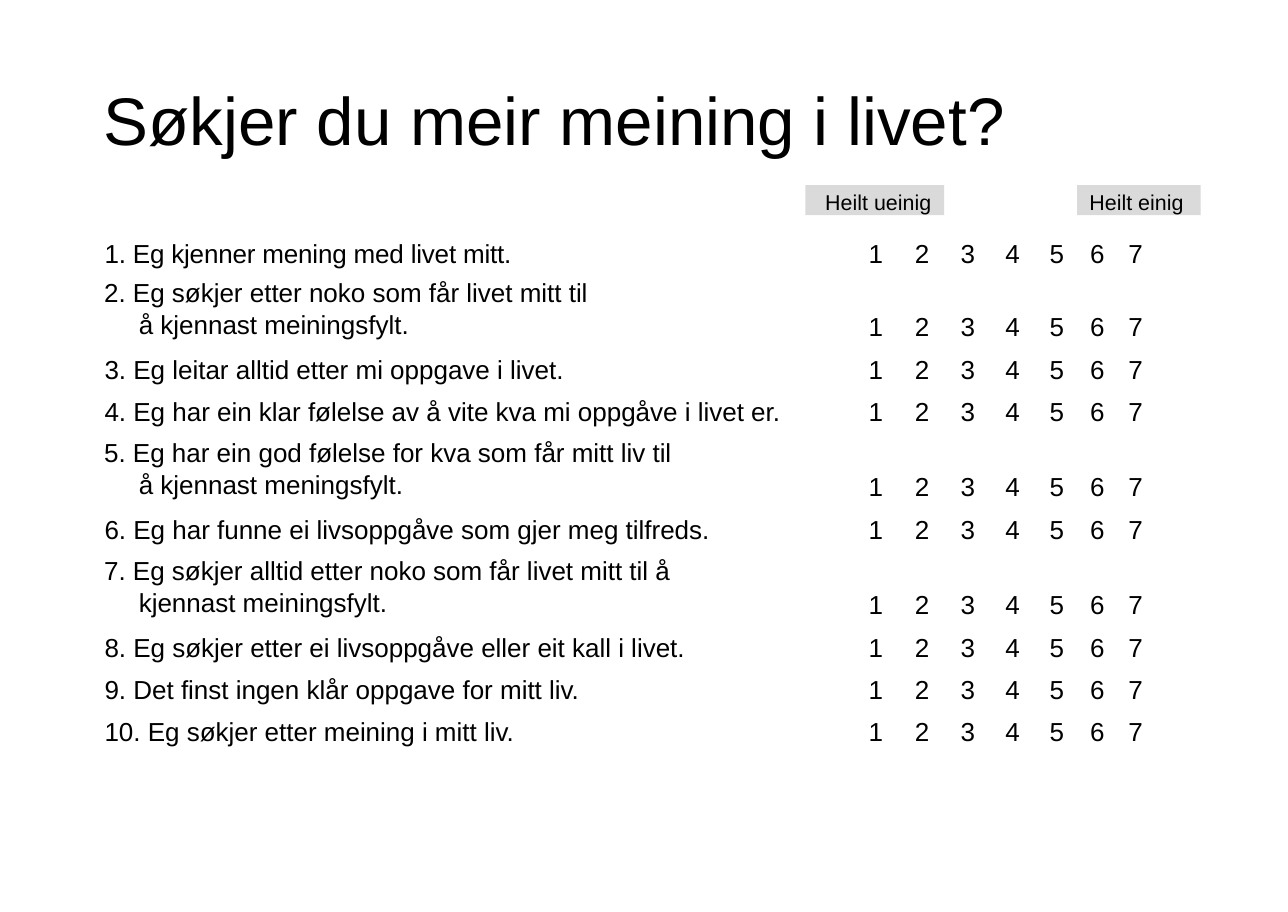
from pptx import Presentation
from pptx.dml.color import RGBColor
from pptx.enum.shapes import MSO_SHAPE as Form
from pptx.enum.text import MSO_ANCHOR as Anchor, MSO_AUTO_SIZE as Fit, PP_ALIGN as Align
from pptx.util import Cm, Pt


def tint(code):
    return RGBColor.from_string(code)


class Sheet:
    face = "Arial"
    ink = "000000"
    gray = "DADADA"

    def __init__(self, deck):
        self.slide = deck.slides.add_slide(deck.slide_layouts[5])

    def inset(self, box, left=0, top=0, right=0):
        box.margin_left, box.margin_top = Cm(left), Cm(top)
        box.margin_right, box.margin_bottom = Cm(right), 0
        box.vertical_anchor = Anchor.TOP

    def words(self, frame, text, size, align=Align.LEFT, space=0):
        frame.text = text
        frame.word_wrap = True
        para = frame.paragraphs[0]
        para.alignment = align
        for run in para.runs:
            run.font.name = self.face
            run.font.size = Pt(size)
            run.font.color.rgb = tint(self.ink)
            if space:
                run._r.get_or_add_rPr().set("spc", str(space))
        return para

    def title(self, text, left, top, width, height):
        head = self.slide.shapes.title
        head.left, head.top, head.width, head.height = map(Cm, (left, top, width, height))
        frame = head.text_frame
        frame.auto_size = Fit.NONE
        self.inset(frame, 0.03, 0.03)
        self.words(frame, text, 44)

    def label(self, text, left, width, pad):
        box = self.slide.shapes.add_shape(Form.RECTANGLE, Cm(left), Cm(4.27), Cm(width), Cm(0.69))
        box.shadow.inherit = False
        box.fill.solid()
        box.fill.fore_color.rgb = tint(self.gray)
        box.line.fill.background()
        self.inset(box.text_frame, pad, 0.08)
        self.words(box.text_frame, text, 14)

    def grid(self, items, widths, left, top):
        count = len(items)
        frame = self.slide.shapes.add_table(
            count, len(widths), Cm(left), Cm(top), Cm(sum(widths)), Cm(11.7))
        table = frame.table
        table.first_row = table.horz_banding = False
        for col, width in zip(table.columns, widths):
            col.width = Cm(width)
        for i, (text, right) in enumerate(items):
            edge = i in (0, count - 1)
            table.rows[i].height = Cm(1.75 if right else 0.81 if edge else 0.97)
            pad = 0.08 if i == count - 1 else 0 if edge else 0.1
            line = Pt(19.6 if i else 18.9) if edge else None
            for j in range(len(widths)):
                cell = table.cell(i, j)
                cell.fill.background()
                if j == 0:
                    self.ask(cell, text, right, pad, line, -4 if i else -13)
                else:
                    self.mark(cell, j, 0.87 if right else pad, line)

    def ask(self, cell, text, right, pad, line, space):
        self.inset(cell, 0, 0.03 if right else pad, right)
        para = self.words(cell.text_frame, text, 17, space=space)
        para.line_spacing = 1.08 if right else line
        props = para._p.get_or_add_pPr()
        props.set("marL", str(Cm(0.89 if right else 0.1)))
        props.set("indent", str(Cm(-0.8 if right else 0)))

    def mark(self, cell, value, pad, line):
        first = value == 1
        left = {5: 0.05, 7: 0.18}.get(value, 0.02)
        self.inset(cell, left, pad, 0.36 if first else 0)
        align = Align.RIGHT if first else Align.CENTER
        self.words(cell.text_frame, str(value), 17, align).line_spacing = line


ITEMS = [
    ("1. Eg kjenner mening med livet mitt.", 0),
    ("2. Eg søkjer etter noko som får livet mitt til å kjennast meiningsfylt.", 5.4),
    ("3. Eg leitar alltid etter mi oppgave i livet.", 0),
    ("4. Eg har ein klar følelse av å vite kva mi oppgåve i livet er.", 0),
    ("5. Eg har ein god følelse for kva som får mitt liv til å kjennast meningsfylt.", 3.5),
    ("6. Eg har funne ei livsoppgåve som gjer meg tilfreds.", 0),
    ("7. Eg søkjer alltid etter noko som får livet mitt til å kjennast meiningsfylt.", 3.5),
    ("8. Eg søkjer etter ei livsoppgåve eller eit kall i livet.", 0),
    ("9. Det finst ingen klår oppgave for mitt liv.", 0),
    ("10. Eg søkjer etter meining i mitt liv.", 0),
]
WIDTHS = [16.94, 1.47, 1.07, 1.04, 1.02, 0.99, 0.91, 0.69]


def main():
    deck = Presentation()
    deck.slide_width, deck.slide_height = Cm(29.7), Cm(21.03)
    sheet = Sheet(deck)
    sheet.title("Søkjer du meir meining i livet?", 2.36, 1.78, 21.16, 1.9)
    sheet.label("Heilt ueinig", 18.57, 3.2, 0.46)
    sheet.label("Heilt einig", 24.84, 2.85, 0.28)
    sheet.grid(ITEMS, WIDTHS, 2.31, 5.54)
    deck.save("out.pptx")


if __name__ == "__main__":
    main()
